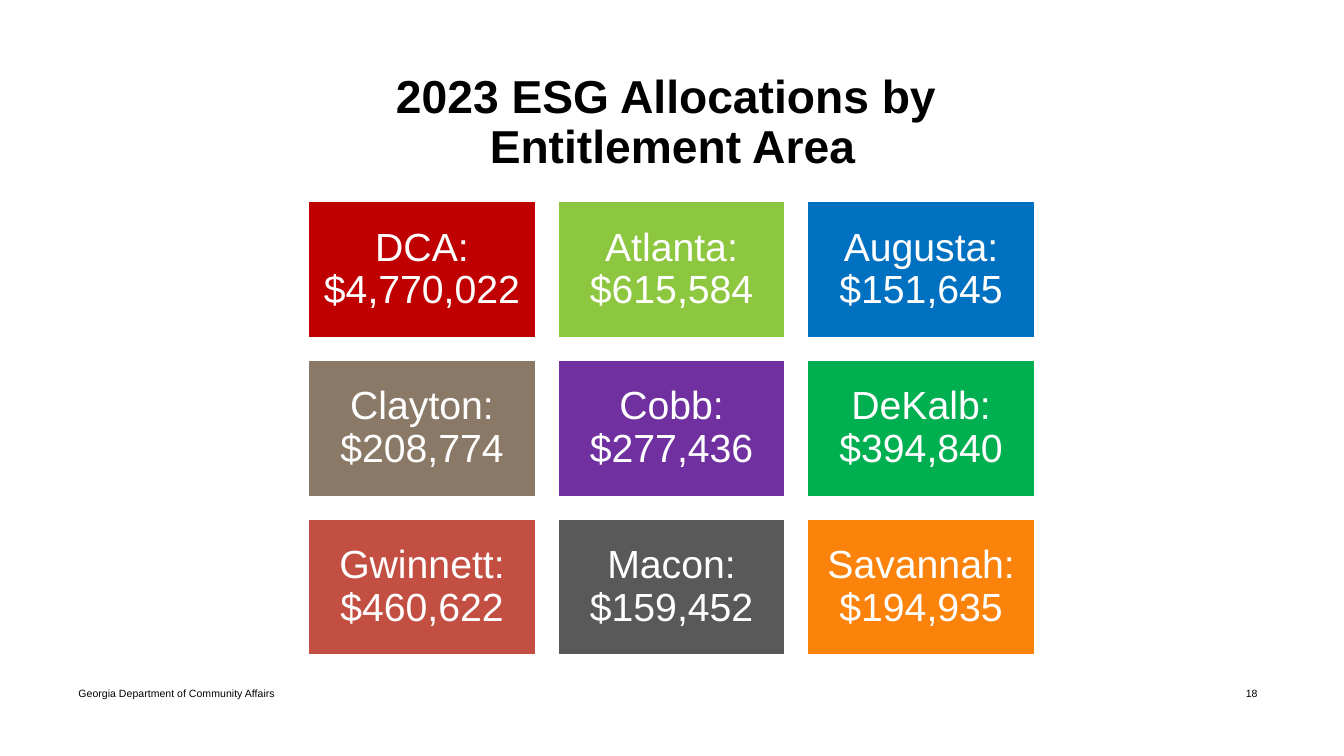
from dataclasses import dataclass

import pptx
import pptx.dml.color
import pptx.enum.shapes
import pptx.enum.text
import pptx.util

Inches = pptx.util.Inches
ALIGN = pptx.enum.text.PP_ALIGN

COLORS = {
    "black": "000000",
    "white": "FFFFFF",
    "red": "C00000",
    "lime": "8DC63F",
    "blue": "0070C0",
    "taupe": "8A7967",
    "purple": "7030A0",
    "green": "00B050",
    "brick": "C34F43",
    "gray": "595959",
    "orange": "FB830B",
}


@dataclass
class Allocation:
    area: str
    amount: str
    color: str


@dataclass
class Label:
    text: str
    left: float
    top: float
    width: float
    height: float
    size: float
    align: ALIGN = ALIGN.CENTER
    bold: bool = False
    spacing: float = 1.0


ALLOCATIONS = [
    Allocation("DCA", "$4,770,022", "red"),
    Allocation("Atlanta", "$615,584", "lime"),
    Allocation("Augusta", "$151,645", "blue"),
    Allocation("Clayton", "$208,774", "taupe"),
    Allocation("Cobb", "$277,436", "purple"),
    Allocation("DeKalb", "$394,840", "green"),
    Allocation("Gwinnett", "$460,622", "brick"),
    Allocation("Macon", "$159,452", "gray"),
    Allocation("Savannah", "$194,935", "orange"),
]

LABELS = [
    Label("2023 ESG Allocations by \vEntitlement Area",
          0.93, 0.6, 11.48, 1.25, 33, bold=True, spacing=0.9),
    Label("Georgia Department of Community Affairs",
          0.68, 6.68, 4.5, 0.4, 7.5, align=ALIGN.LEFT),
    Label("18", 12.08, 6.51, 0.67, 0.74, 7.5),
]

COLUMNS = 3
GRID_LEFT, GRID_TOP = 3.06, 2.0
CARD_WIDTH, CARD_HEIGHT = 2.25, 1.35
COLUMN_STEP, ROW_STEP = 2.475, 1.575
CARD_MARGIN = 0.12


def rgb(name: str) -> pptx.dml.color.RGBColor:
    return pptx.dml.color.RGBColor.from_string(COLORS[name])


def set_text(tf, text: str, size: float, color: str, align: ALIGN,
             bold: bool = False, spacing: float = 1.0) -> None:
    """Fill a text frame with one vertically centred, wrapped paragraph."""
    tf.word_wrap = True
    tf.vertical_anchor = pptx.enum.text.MSO_ANCHOR.MIDDLE
    tf.text = text
    p = tf.paragraphs[0]
    p.alignment = align
    p.line_spacing = spacing
    for r in p.runs:
        r.font.name = "Arial"
        r.font.size = pptx.util.Pt(size)
        r.font.bold = bold
        r.font.color.rgb = rgb(color)


def add_label(s, label: Label) -> None:
    box = s.shapes.add_textbox(Inches(label.left), Inches(label.top),
                               Inches(label.width), Inches(label.height))
    set_text(box.text_frame, label.text, label.size, "black", label.align,
             label.bold, label.spacing)


def add_card(s, allocation: Allocation, row: int, column: int) -> None:
    sp = s.shapes.add_shape(
        pptx.enum.shapes.MSO_SHAPE.RECTANGLE,
        Inches(GRID_LEFT + column * COLUMN_STEP),
        Inches(GRID_TOP + row * ROW_STEP),
        Inches(CARD_WIDTH), Inches(CARD_HEIGHT))
    sp.shadow.inherit = False
    sp.fill.solid()
    sp.fill.fore_color.rgb = rgb(allocation.color)
    sp.line.color.rgb = rgb("white")
    sp.line.width = pptx.util.Pt(1)
    tf = sp.text_frame
    tf.margin_left = tf.margin_right = Inches(CARD_MARGIN)
    tf.margin_top = tf.margin_bottom = Inches(CARD_MARGIN)
    set_text(tf, f"{allocation.area}: {allocation.amount}", 28, "white",
             ALIGN.CENTER, spacing=0.9)


def main() -> None:
    prs = pptx.Presentation()
    prs.slide_width, prs.slide_height = Inches(13.33), Inches(7.5)
    s = prs.slides.add_slide(prs.slide_layouts[6])
    for label in LABELS:
        add_label(s, label)
    for index, allocation in enumerate(ALLOCATIONS):
        add_card(s, allocation, *divmod(index, COLUMNS))
    prs.save("out.pptx")


if __name__ == "__main__":
    main()
